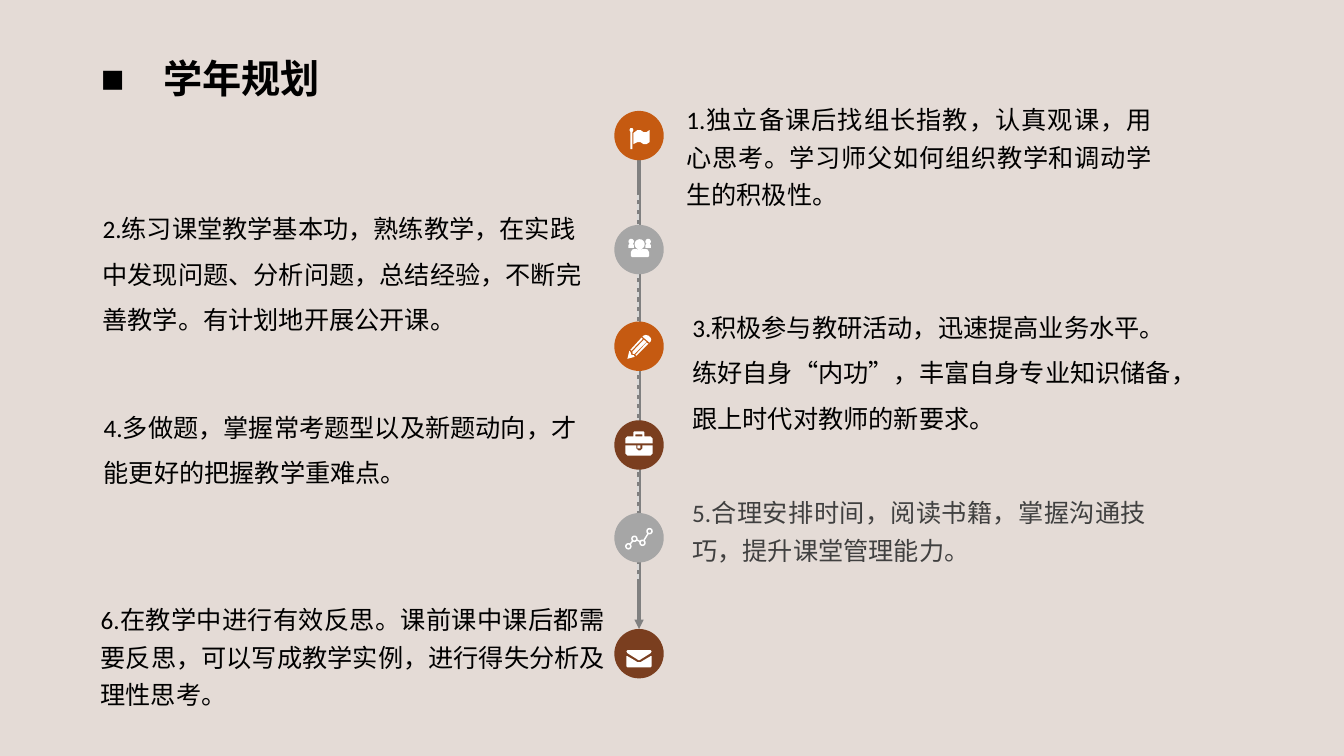
from math import cos, hypot, pi, sin

from lxml import etree
from pptx import Presentation
from pptx.dml.color import RGBColor
from pptx.enum.dml import MSO_LINE
from pptx.enum.shapes import MSO_CONNECTOR, MSO_SHAPE
from pptx.enum.text import MSO_ANCHOR, MSO_AUTO_SIZE, PP_ALIGN
from pptx.oxml.ns import qn
from pptx.util import Pt

STRAIGHT = MSO_CONNECTOR.STRAIGHT
OVAL = MSO_SHAPE.OVAL
DASH = MSO_LINE.DASH
MIDDLE, TOP = MSO_ANCHOR.MIDDLE, MSO_ANCHOR.TOP
LEFT, JUSTIFY = PP_ALIGN.LEFT, PP_ALIGN.JUSTIFY
NO_FIT, GROW = MSO_AUTO_SIZE.NONE, MSO_AUTO_SIZE.SHAPE_TO_FIT_TEXT
CJK_FONT = "Noto Sans CJK SC"
TITLE_LAYOUT = 5

COLORS = {
    "background": "E4DBD6", "black": "000000", "white": "FFFFFF", "dark": "404040",
    "orange": "C55A11", "gray": "A6A6A6", "brown": "7A3E1F",
    "axis": "808080", "dash": "D9D9D9",
}

DIAMETER = 35.3
AXIS_X = 456.45
ICON_UNIT = 0.72


def ring(x, y, radius, steps=20):
    """Return the points of a round outline."""
    return [(x + radius * cos(2 * pi * i / steps), y + radius * sin(2 * pi * i / steps))
            for i in range(steps)]


def link(start, end, gap=2.8, half=0.7):
    """Return a thin bar between two ring edges."""
    (x1, y1), (x2, y2) = start, end
    length = hypot(x2 - x1, y2 - y1)
    dx, dy = (x2 - x1) / length, (y2 - y1) / length
    ends = [(x1 + gap * dx, y1 + gap * dy), (x2 - gap * dx, y2 - gap * dy)]
    near = [(x - half * dy, y + half * dx) for x, y in ends]
    far = [(x + half * dy, y - half * dx) for x, y in reversed(ends)]
    return near + far


def person(x):
    """Return the head and shoulders of a person at the side."""
    return [ring(x, 16.6, 2.7),
            [(x - 2.7, 20), (x - 1.7, 19), (x + 1.7, 19), (x + 2.7, 20),
             (x + 2.7, 23), (x - 2.7, 23)]]


NODES = [(14, 33), (20, 25.5), (28, 29.5), (35, 18)]
ICONS = {
    "flag": [
        [(16, 17), (18, 17), (19, 19), (18, 21), (18, 38), (16, 38), (16, 21), (15, 19)],
        [(19, 22), (23, 19), (26, 19), (29, 21), (32, 21), (35, 19), (35, 31),
         (32, 33), (29, 33), (26, 31), (23, 31), (19, 33)]],
    "people": [
        *person(16.8), *person(33.6), ring(25.2, 19.3, 5),
        [(16.5, 27), (18, 24.5), (20, 24), (23, 24.3), (27, 24.3), (31, 24),
         (33, 24.5), (34.5, 27), (34.5, 31), (33.5, 32), (17.5, 32), (16.5, 31)]],
    "pencil": [
        [(36, 20), (35, 21), (28, 15), (29, 14), (31, 13.3), (34, 14), (36, 16), (36.7, 18)],
        [(21, 33), (22, 34), (34, 22), (32, 21)],
        [(16, 28), (17, 29), (28.3, 17.3), (27, 16)],
        [(18, 30), (18.3, 32), (20, 32.3), (32, 20.3), (29.3, 18)],
        [(13, 37), (15, 29), (16, 30), (17, 33), (19.3, 33.3), (20.3, 35)]],
    "briefcase": [
        [(11, 23), (11, 18), (13, 16), (19, 16), (19, 12), (20, 11), (29, 11),
         (30, 12), (30, 16), (36, 16), (38, 18), (38, 23)],
        [(21, 16), (28, 16), (28, 14), (21, 14)],
        [(38, 25), (38, 33), (36, 35), (13, 35), (11, 33), (11, 25), (22, 25),
         (22, 28), (24, 30), (26, 30), (28, 28), (28, 25)],
        [(23, 25), (26, 25), (26, 28), (23, 28)]],
    "trend": [ring(x, y, r) for x, y in NODES for r in (3.2, 1.7)]
    + [link(a, b) for a, b in zip(NODES, NODES[1:])],
    "envelope": [
        [(12, 27), (13, 27), (20, 31), (23, 33), (26, 33), (29, 31), (36, 27),
         (37, 27), (37, 37), (36, 38), (13, 38), (12, 37)],
        [(12, 22), (13, 21), (36, 21), (37, 22), (36, 24), (28, 29), (25, 31),
         (24, 31), (21, 29), (13, 24)]],
}

MARKERS = [(79.2, "orange", "flag"), (160.6, "gray", "people"),
           (229.7, "orange", "pencil"), (300.2, "brown", "briefcase"),
           (366.5, "gray", "trend"), (449.3, "brown", "envelope")]

JUSTIFIED = {"align": JUSTIFY, "spacing": 1.25}
PLANS = [
    ((483.1, 65.5, 347, 89.3), JUSTIFIED,
     ["1.独立备课后找组长指教，认真观课，用心思考。学习师父如何组织教学和调动学生的积极性。"]),
    ((66.2, 138.2, 365.8, 138.2), {},
     ["2.练习课堂教学基本功，熟练教学，在实践中发现问题、分析问题，总结经验，不断完善教学。有计划地开展公开课。"]),
    ((487.4, 208.8, 365.8, 105.1), {},
     ["3.积极参与教研活动，迅速提高业务水平。练好自身“内功”，丰富自身专业知识储备，跟上时代对教师的新要求。"]),
    ((67, 280.1, 358.6, 72.7), {},
     ["4.多做题，掌握常考题型以及新题动向，才能更好的把握教学重难点。"]),
    ((487.4, 346.3, 338.4, 61.9), {**JUSTIFIED, "color": "dark"},
     ["5.", "合理安排时间，阅读书籍，掌握沟通技巧，提升课堂管理能力。"]),
    ((64.8, 422.6, 374.4, 89.3), JUSTIFIED,
     ["6.在教学中进行有效反思。课前课中课后都需要反思，可以写成教学实例，进行得失分析及理性思考。"]),
]


def rgb(name):
    """Return a named colour."""
    return RGBColor.from_string(COLORS[name])


def write_text(shape, runs, fonts=("Calibri", "Arial"), size=18, color="black", bold=False,
               align=LEFT, spacing=1.5, anchor=TOP, fit=GROW, bullet=None, indent=0):
    """Fill a shape with one formatted paragraph."""
    frame = shape.text_frame
    frame.word_wrap = True
    frame.auto_size = fit
    frame.vertical_anchor = anchor
    paragraph = frame.paragraphs[0]
    paragraph.alignment = align
    paragraph.line_spacing = spacing
    if bullet:
        properties = paragraph._p.get_or_add_pPr()
        properties.set("marL", str(Pt(indent)))
        properties.set("indent", str(-Pt(indent)))
        etree.SubElement(properties, qn("a:buFont")).set("typeface", "Arial")
        etree.SubElement(properties, qn("a:buChar")).set("char", bullet)
    for text, font_name in zip(runs, fonts):
        run = paragraph.add_run()
        run.text = text
        font = run.font
        font.size, font.bold, font.name = Pt(size), bold, font_name
        font.color.rgb = rgb(color)
        etree.SubElement(run._r.get_or_add_rPr(), qn("a:ea")).set("typeface", CJK_FONT)


def place(shape, left, top, width, height):
    """Move and size a shape in points."""
    shape.left, shape.top, shape.width, shape.height = map(Pt, (left, top, width, height))


def paint(shape, color):
    """Give a shape a plain fill without line or shadow."""
    shape.shadow.inherit = False
    shape.fill.solid()
    shape.fill.fore_color.rgb = rgb(color)
    shape.line.fill.background()


def add_axis(slide, x, top, bottom, color, width, dash=None, arrow=False):
    """Draw one vertical line of the timeline."""
    axis = slide.shapes.add_connector(STRAIGHT, Pt(x), Pt(top), Pt(x), Pt(bottom))
    axis.line.color.rgb = rgb(color)
    axis.line.width = Pt(width)
    if dash:
        axis.line.dash_style = dash
    if arrow:
        etree.SubElement(axis.line._get_or_add_ln(), qn("a:tailEnd")).set("type", "triangle")
    etree.SubElement(axis._element.spPr, qn("a:effectLst"))
    return axis


def add_marker(slide, top, color, icon):
    """Draw a round marker with its white icon."""
    left = AXIS_X - DIAMETER / 2
    circle = slide.shapes.add_shape(OVAL, *map(Pt, (left, top, DIAMETER, DIAMETER)))
    paint(circle, color)
    outlines = [[(Pt(x * ICON_UNIT), Pt(y * ICON_UNIT)) for x, y in outline]
                for outline in ICONS[icon]]
    builder = slide.shapes.build_freeform(*outlines[0][0])
    for outline in outlines:
        builder.move_to(*outline[0])
        builder.add_line_segments(outline[1:], close=True)
    paint(builder.convert_to_shape(Pt(left), Pt(top)), "white")
    return circle


def main():
    """Build the school-year plan slide."""
    presentation = Presentation()
    presentation.slide_width, presentation.slide_height = Pt(960), Pt(540)
    slide = presentation.slides.add_slide(presentation.slide_layouts[TITLE_LAYOUT])
    slide.background.fill.solid()
    slide.background.fill.fore_color.rgb = rgb("background")
    title = slide.shapes.title
    place(title, 64.8, 30.2, 864, 55.4)
    write_text(title, ["学年规划"], fonts=[CJK_FONT], size=28, bold=True, spacing=0.9,
               anchor=MIDDLE, fit=NO_FIT, bullet="■", indent=44.6)

    axis = add_axis(slide, AXIS_X, 79.2, 449.3, "axis", 2.25, arrow=True)
    add_axis(slide, 455.8, 139, 414, "dash", 1, dash=DASH)
    circles = [add_marker(slide, *marker) for marker in MARKERS]
    axis.begin_connect(circles[0], 0)
    axis.end_connect(circles[-1], 0)

    for box, style, runs in PLANS:
        write_text(slide.shapes.add_textbox(*map(Pt, box)), runs, **style)
    presentation.save("out.pptx")


if __name__ == "__main__":
    main()
